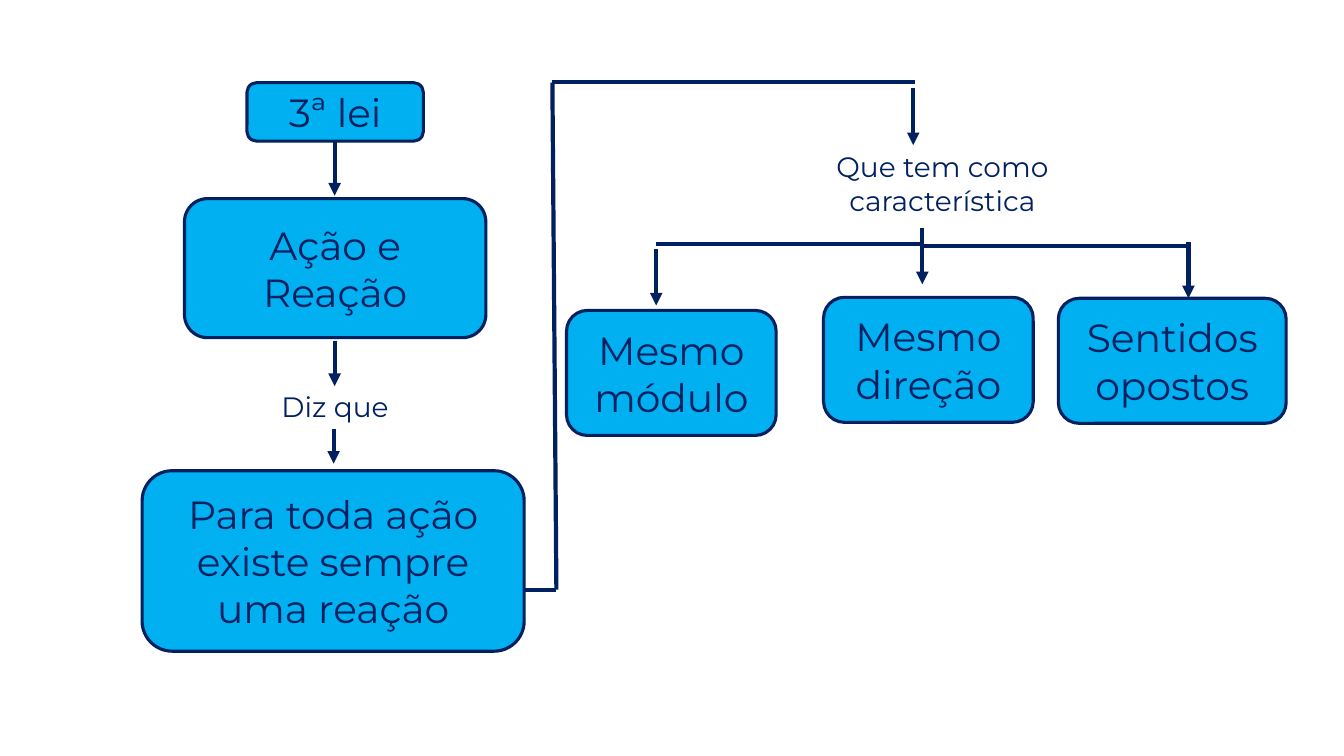
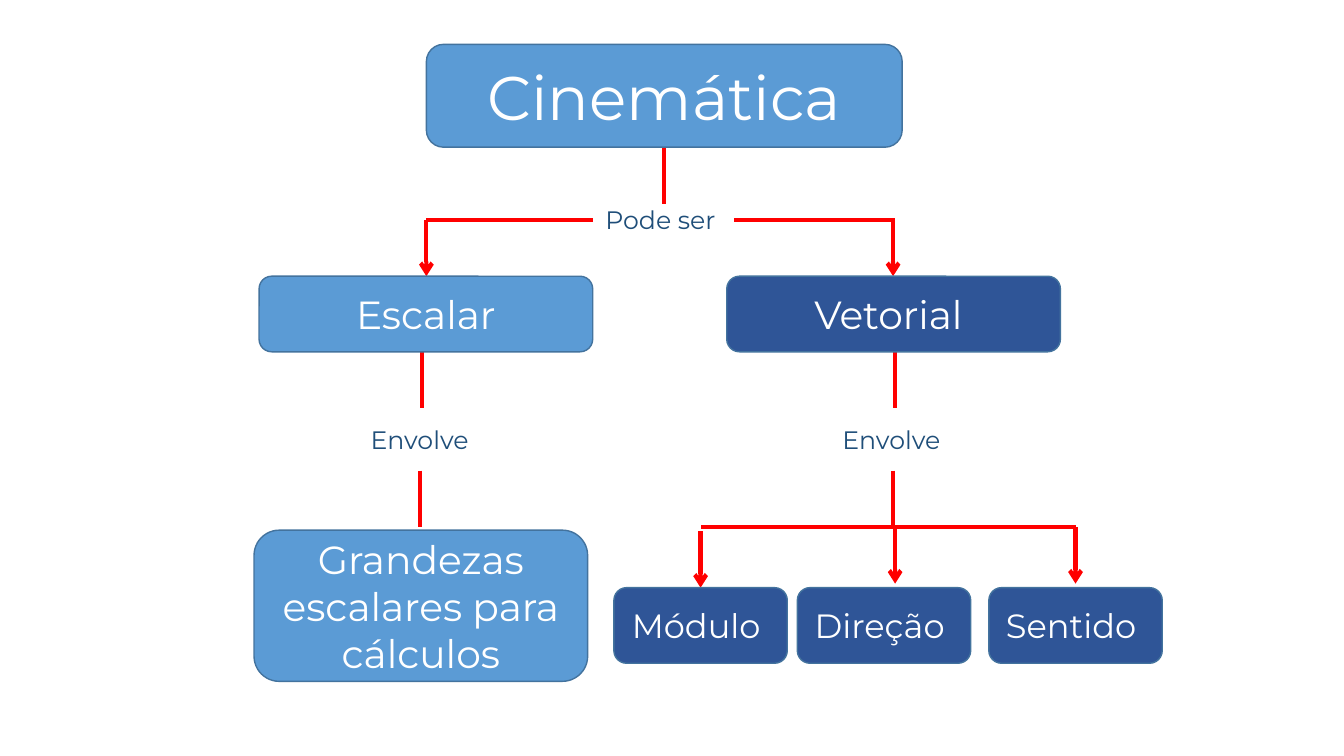
from pptx import Presentation
from pptx.dml.color import RGBColor
from pptx.enum.shapes import MSO_CONNECTOR as Connector, MSO_SHAPE as Preset
from pptx.enum.text import MSO_ANCHOR as Anchor, MSO_AUTO_SIZE as AutoSize, PP_ALIGN as Align
from pptx.oxml.ns import qn
from pptx.util import Inches, Pt
from lxml.etree import SubElement

COLUMNS, ROWS = 133.33, 75
CELL = Inches(0.1)
FRAME_FORMAT = {
    "word_wrap": True, "auto_size": AutoSize.NONE, "vertical_anchor": Anchor.MIDDLE,
    "margin_left": Inches(0.1), "margin_right": Inches(0.1),
    "margin_top": Inches(0.05), "margin_bottom": Inches(0.05),
}
color = RGBColor.from_string

NAVY, CYAN = "002060", "00B0F0"
SKY, ROYAL, STEEL, TEAL = "5B9BD5", "2F5597", "43739E", "1F4E79"
RED, WHITE = "FF0000", "FFFFFF"


def add_node(slide, label, area, size, fill, ink, border, is_title):
    shapes = slide.shapes
    place = [round(cells * CELL) for cells in area]
    holder = None
    if fill:
        holder = shapes.add_shape(Preset.ROUNDED_RECTANGLE, *place)
        holder.shadow.inherit = False
        holder.fill.solid()
        holder.fill.fore_color.rgb = color(fill)
        holder.line.color.rgb = color(border[0])
        holder.line.width = Pt(border[1])
    else:
        holder = shapes.add_textbox(*place)
    if is_title:
        holder = shapes.title
        for side, length in zip(("left", "top", "width", "height"), place):
            setattr(holder, side, length)
        shapes._spTree.append(holder._element)
    frame = holder.text_frame
    for name, value in FRAME_FORMAT.items():
        setattr(frame, name, value)
    line = frame.paragraphs[0]
    line.alignment = Align.CENTER
    text = line.add_run()
    text.text = label
    for name, value in {"name": "Montserrat", "size": Pt(size)}.items():
        setattr(text.font, name, value)
    text.font.color.rgb = color(ink)


def add_link(slide, ends, ink, head):
    link = slide.shapes.add_connector(
        Connector.STRAIGHT, *[round(cells * CELL) for cells in ends])
    link.line.color.rgb = color(ink)
    link.line.width = Pt(3)
    properties = link._element.spPr
    if head:
        SubElement(properties.find(qn("a:ln")), qn("a:tailEnd"), type=head)
    SubElement(properties, qn("a:effectLst"))


law_axis, trait_axis = 33.2, 91.5
law = {
    "border": (NAVY, 2.25), "link": NAVY, "head": "triangle", "ink": NAVY, "caption": NAVY,
    "nodes": [
        ("3ª lei", (24.5, 8.2, 17.5, 5.8), 28, CYAN),
        ("Ação e Reação", (18.3, 19.7, 29.9, 13.8), 28, CYAN),
        ("Diz que", (17.1, 37.4, 32.3, 5.8), 20, None),
        ("Para toda ação existe sempre uma reação", (14.1, 46.7, 37.9, 17.9), 28, CYAN),
        ("Que tem como característica", (77, 15, 33, 6.4), 20, None),
        ("Mesmo módulo", (56.2, 30.8, 20.8, 12.4), 28, CYAN),
        ("Mesmo direção", (81.7, 29.5, 20.8, 12.4), 28, CYAN),
        ("Sentidos opostos", (105, 29.6, 22.6, 12.4), 28, CYAN),
    ],
    "lines": [
        (52, 58.5, 55.2, 58.5), (55.2, 58.5, 54.8, 8.2), (54.8, 8.1, 90.8, 8.1),
        (65.1, 24.2, trait_axis, 24.2), (trait_axis, 24.4, 118, 24.4),
    ],
    "arrows": [
        (law_axis, 13.8, law_axis, 19.4), (law_axis, 33.8, law_axis, 38.3),
        (33.1, 42.6, 33.1, 46), (90.6, 8.7, 90.6, 14.4),
    ] + [(x, top, x, top + 5.6) for x, top in ((65.1, 24.7), (trait_axis, 22.6), (117.9, 24))],
}

scalar_axis, vector_axis = 42.3, 88.6
kinematics = {
    "border": (STEEL, 1), "link": RED, "head": "arrow", "ink": WHITE, "caption": TEAL,
    "nodes": [
        ("Cinemática", (42.3, 4.4, 47.2, 10.2), 44, SKY),
        ("Pode ser ", (56, 18.6, 19.7, 6.3), 18, None),
        ("Escalar", (25.7, 27.4, 33.1, 7.5), 28, SKY),
        ("Vetorial ", (72.1, 27.4, 33.1, 7.5), 28, ROYAL),
        ("Grandezas escalares para cálculos", (25.2, 52.6, 33.1, 15), 28, SKY),
    ] + [("Envolve ", (left, 40.4, 19.7, 6.3), 18, None) for left in (32.1, 78.9)]
      + [(trait + " ", (left, 58.3, 17.2, 7.5), 24, ROYAL)
         for trait, left in (("Módulo", 60.9), ("Direção", 79.1), ("Sentido", 98.1))],
    "lines": [
        (65.9, 14.7, 65.9, 20.2), (58.8, 21.8, scalar_axis, 21.8),
        (88.8, 21.8, 72.8, 21.8), (106.7, 52.3, 69.5, 52.3),
    ] + [(x, top, x, top + 5.6)
         for x, top in ((41.9, 34.9), (88.8, 34.9), (41.7, 46.7), (vector_axis, 46.7))],
    "arrows": [(x, top, x, top + 5.6) for x, top in (
        (scalar_axis, 21.8), (vector_axis, 21.8), (69.5, 52.7), (88.8, 52.3), (106.7, 52.3))],
}

deck = Presentation()
deck.slide_width, deck.slide_height = round(COLUMNS * CELL), ROWS * CELL
title_only = deck.slide_layouts[5]

for concept in (law, kinematics):
    slide = deck.slides.add_slide(title_only)
    for group, head in (("lines", None), ("arrows", concept["head"])):
        for ends in concept[group]:
            add_link(slide, ends, concept["link"], head)
    for order, (label, area, size, fill) in enumerate(concept["nodes"]):
        ink = concept["ink"] if fill else concept["caption"]
        add_node(slide, label, area, size, fill, ink, concept["border"], order == 0)

deck.save("out.pptx")
